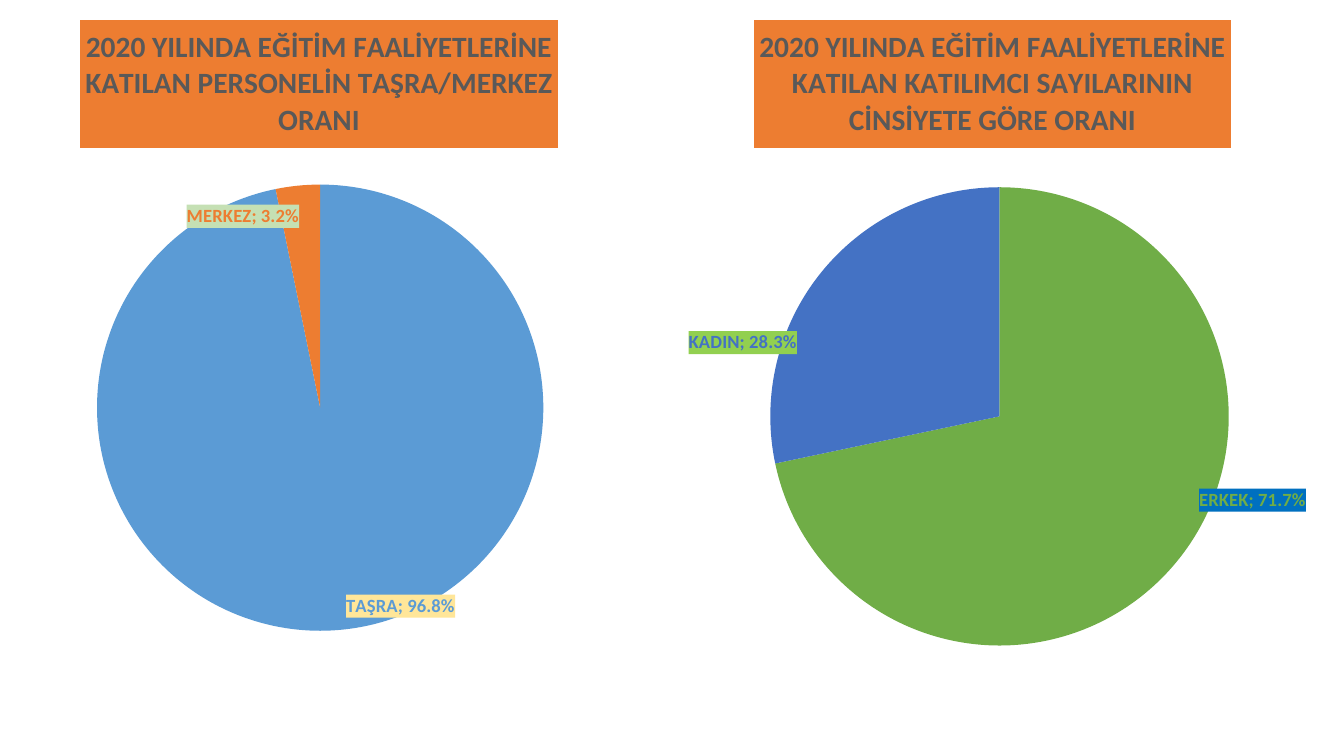
import pptx
import pptx.chart.data
import pptx.dml.color
import pptx.enum.chart
import pptx.oxml
import pptx.oxml.ns
import pptx.util

COLORS = {
    "text": "000000", "title": "595959", "orange": "ED7D31",
    "blue": "5B9BD5", "green": "70AD47", "indigo": "4472C4",
    "yellow tint": "FFE699", "green tint": "C5E0B4",
    "lime": "92D050", "deep blue": "0070C0", "leader": "A6A6A6",
}
BLANK_LAYOUT = 6
SLIDE_WIDTH_PX = 1344
NAMESPACES = pptx.oxml.ns.nsdecls("c", "a")
LABEL_FLAGS = {"LegendKey": 0, "Val": 1, "CatName": 1,
               "SerName": 0, "Percent": 0, "BubbleSize": 0}


def rgb(name):
    return pptx.dml.color.RGBColor.from_string(COLORS[name])


def solid_xml(name):
    return f'<a:solidFill><a:srgbClr val="{COLORS[name]}"/></a:solidFill>'


def layout_xml(**values):
    """Return a manual layout; the keywords are its child elements in order."""
    children = "".join(f'<c:{tag} val="{value}"/>' for tag, value in values.items())
    return f"<c:layout {NAMESPACES}><c:manualLayout>{children}</c:manualLayout></c:layout>"


def find(chart, tag):
    return chart.element.find(".//" + pptx.oxml.ns.qn(tag))


def place(parent, **values):
    """Give a chart title or plot area its manual layout, after any text."""
    for old in parent.findall(pptx.oxml.ns.qn("c:layout")):
        parent.remove(old)
    text = parent.find(pptx.oxml.ns.qn("c:tx"))
    index = 0 if text is None else parent.index(text) + 1
    parent.insert(index, pptx.oxml.parse_xml(layout_xml(**values)))


class PieSlide:
    font = "Calibri"
    title_size = 21
    label_size = 13.3
    number_format = "0.0%"

    def __init__(self, deck):
        self.scale = deck.slide_width / SLIDE_WIDTH_PX
        self.page = deck.slides.add_slide(deck.slide_layouts[BLANK_LAYOUT])

    def emu(self, px):
        return pptx.util.Emu(round(px * self.scale))

    def pie(self, box, title, title_at, plot_box, slices):
        """Add a pie; slices hold name, value, colour, label fill and label shift."""
        size = box[2:]
        data = pptx.chart.data.CategoryChartData(number_format=self.number_format)
        data.categories = [name for name, *_ in slices]
        data.add_series("Series 1", [value for _, value, *_ in slices])
        chart = self.page.shapes.add_chart(
            pptx.enum.chart.XL_CHART_TYPE.PIE, *map(self.emu, box), data).chart
        chart.has_legend = False
        chart.font.name = self.font
        chart.font.size = pptx.util.Pt(10)
        chart.font.color.rgb = rgb("text")
        chart.plots[0].vary_by_categories = True
        x, y, width, height = plot_box
        place(find(chart, "c:plotArea"), layoutTarget="inner",
              xMode="edge", yMode="edge", x=x, y=y, w=width, h=height)

        self.title(chart, title, title_at, size)
        self.series_labels(chart)
        for index, (_, _, color, label_fill, shift) in enumerate(slices):
            fill = chart.plots[0].series[0].points[index].format.fill
            fill.solid()
            fill.fore_color.rgb = rgb(color)
            self.slice_label(chart, index, color, label_fill, shift, size)

    def title(self, chart, text, at, size):
        title = chart.chart_title
        span = title.text_frame.paragraphs[0].add_run()
        span.text = text
        span.font.name = self.font
        span.font.size = pptx.util.Pt(self.title_size)
        span.font.bold = True
        span.font.color.rgb = rgb("title")
        title.format.fill.solid()
        title.format.fill.fore_color.rgb = rgb("orange")
        place(find(chart, "c:title"), xMode="edge", yMode="edge",
              x=at[0] / size[0], y=at[1] / size[1])

    def series_labels(self, chart):
        labels = chart.plots[0].series[0].data_labels
        labels.number_format = self.number_format
        labels.number_format_is_linked = False
        labels.position = pptx.enum.chart.XL_LABEL_POSITION.OUTSIDE_END
        labels.show_value = True
        labels.show_category_name = True
        find(chart, "c:showLeaderLines").addnext(pptx.oxml.parse_xml(
            f'<c:leaderLines {NAMESPACES}><c:spPr><a:ln w="9525">'
            f'{solid_xml("leader")}</a:ln></c:spPr></c:leaderLines>'))

    def slice_label(self, chart, index, color, fill, shift, size):
        """Add one filled label, moved by shift px from its automatic place."""
        layout = layout_xml(x=shift[0] / size[0], y=shift[1] / size[1])
        flags = "".join(f'<c:show{key} val="{on}"/>' for key, on in LABEL_FLAGS.items())
        find(chart, "c:dLbls").insert(index, pptx.oxml.parse_xml(
            f'<c:dLbl {NAMESPACES}><c:idx val="{index}"/>{layout}'
            f'<c:numFmt formatCode="{self.number_format}" sourceLinked="0"/>'
            f'<c:spPr>{solid_xml(fill)}</c:spPr>'
            f'<c:txPr><a:bodyPr wrap="none"/><a:p><a:pPr>'
            f'<a:defRPr sz="{round(self.label_size * 100)}" b="1">{solid_xml(color)}'
            f'<a:latin typeface="{self.font}"/></a:defRPr></a:pPr></a:p></c:txPr>'
            f'<c:dLblPos val="outEnd"/>{flags}<c:separator>; </c:separator></c:dLbl>'))


def main():
    deck = pptx.Presentation()
    deck.slide_width = pptx.util.Inches(13.33)
    deck.slide_height = pptx.util.Inches(7.5)
    slide = PieSlide(deck)
    slide.pie(
        box=(678, 0, 628, 756),
        title="2020 YILINDA EĞİTİM FAALİYETLERİNE KATILAN KATILIMCI SAYILARININ "
              "CİNSİYETE GÖRE ORANI",
        title_at=(76, 20),
        plot_box=(0.147, 0.172, 0.73, 0.758),
        slices=[("ERKEK", 0.717, "green", "deep blue", (18, -76)),
                ("KADIN", 0.283, "indigo", "lime", (-20, 86))])
    slide.pie(
        box=(0, 0, 634, 756),
        title="2020 YILINDA EĞİTİM FAALİYETLERİNE KATILAN PERSONELİN "
              "TAŞRA/MERKEZ ORANI",
        title_at=(80, 20),
        plot_box=(0.153, 0.174, 0.704, 0.731),
        slices=[("TAŞRA", 0.968, "blue", "yellow tint", (3, -41)),
                ("MERKEZ", 0.032, "orange", "green tint", (2, 48))])
    deck.save("out.pptx")


if __name__ == "__main__":
    main()
